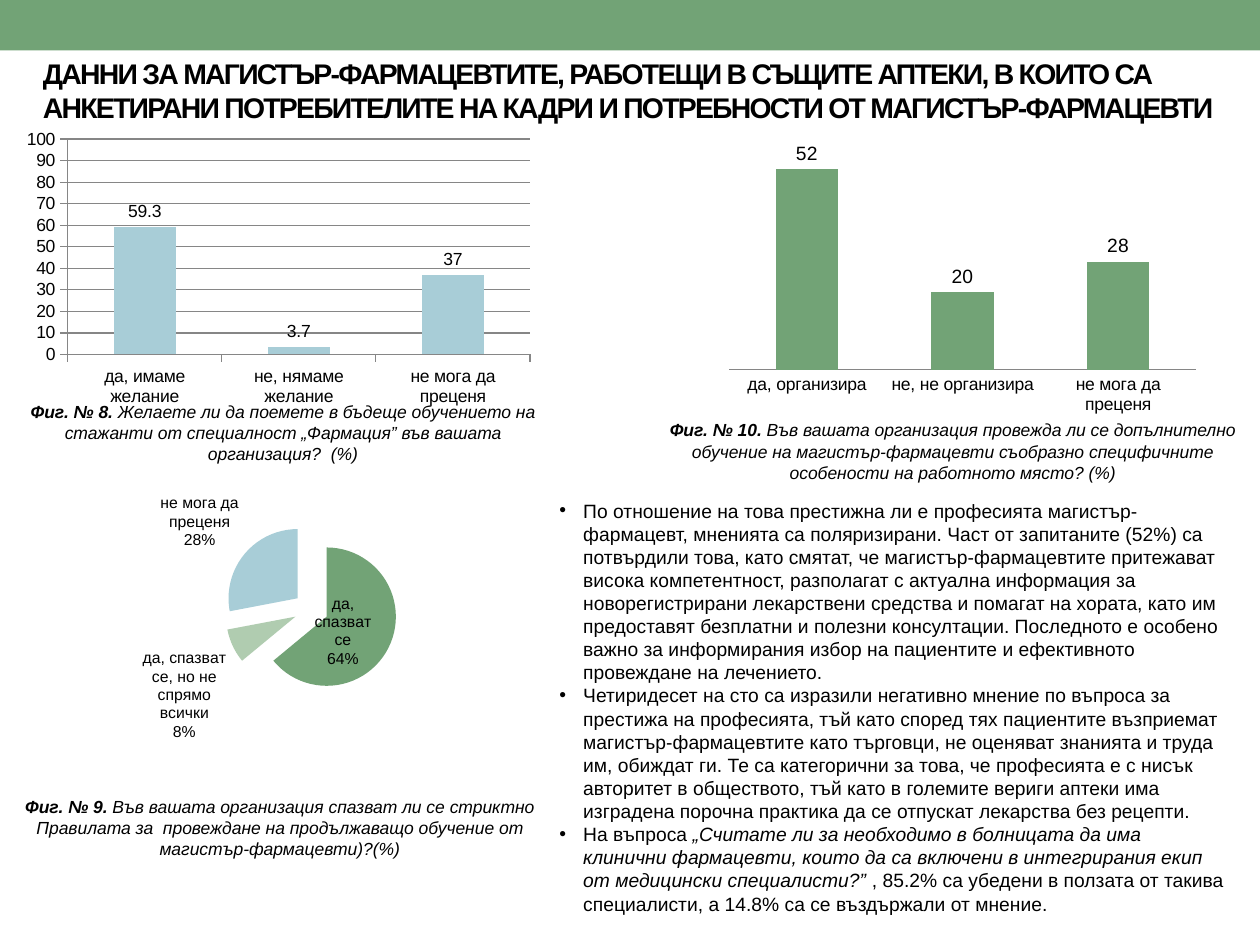
import pptx
import pptx.util
import pptx.chart.data
import pptx.dml.color
import pptx.enum.chart
import pptx.enum.shapes
import pptx.enum.text
import pptx.oxml
import pptx.oxml.ns
from lxml import etree

Inches, Pt = pptx.util.Inches, pptx.util.Pt
RGB = pptx.dml.color.RGBColor.from_string
CHART, TICK, LABEL = (pptx.enum.chart.XL_CHART_TYPE, pptx.enum.chart.XL_TICK_MARK,
                      pptx.enum.chart.XL_LABEL_POSITION)
ALIGN, FIT = pptx.enum.text.PP_ALIGN, pptx.enum.text.MSO_AUTO_SIZE
qn = pptx.oxml.ns.qn

FONT = "Arial"
COLORS = {"green": "72A376", "pale": "B0CCB0", "blue": "A8CDD7", "text": "000000", "axis": "868686"}

TITLE = ("ДАННИ ЗА МАГИСТЪР-ФАРМАЦЕВТИТЕ, РАБОТЕЩИ В СЪЩИТЕ АПТЕКИ, В КОИТО СА "
         "АНКЕТИРАНИ ПОТРЕБИТЕЛИТЕ НА КАДРИ И ПОТРЕБНОСТИ ОТ МАГИСТЪР-ФАРМАЦЕВТИ")

COLUMNS = [
    {"at": (0.12, 0.99, 4.17, 2.28), "plot": (0.1, 0.05, 0.88, 0.75), "color": "blue",
     "cats": ["да, имаме желание", "не, нямаме желание", "не мога да преценя"],
     "vals": [59.3, 3.7, 37], "max": 100, "scale": True, "size": 10},
    {"at": (5.71, 1.05, 3.86, 2.3), "plot": (0.02, 0.02, 0.96, 0.8), "color": "green",
     "cats": ["да, организира", "не, не организира", "не мога да преценя"],
     "vals": [52, 20, 28], "max": 60, "scale": False, "size": 11},
]
PIE = {"at": (0.28, 3.74, 4.17, 2.41), "plot": (0.36, 0.17, 0.33, 0.57),
       "cats": ["да, спазват се", "да, спазват се, но не спрямо всички", "не мога да преценя"],
       "vals": [64, 8, 28], "colors": ["green", "pale", "blue"]}

CAPTIONS = [
    ((0.12, 3.13, 4.25, 0.61), "Фиг. № 8.",
     " Желаете ли да поемете в бъдеще обучението на стажанти от специалност "
     "„Фармация” във вашата организация?  (%)"),
    ((-0.01, 6.27, 4.46, 0.61), "Фиг. № 9.",
     " Във вашата организация спазват ли се стриктно Правилата за  провеждане на "
     "продължаващо обучение от магистър-фармацевти)?(%)"),
    ((5.14, 3.28, 4.84, 0.61), "Фиг. № 10.",
     " Във вашата организация провежда ли се допълнително обучение на магистър-фармацевти "
     "съобразно специфичните особености на работното място? (%)"),
]

FINDINGS = [
    [("По отношение на това престижна ли е професията магистър-фармацевт, мненията са "
      "поляризирани. Част от запитаните (52%) са потвърдили това, като смятат, че "
      "магистър-фармацевтите притежават висока компетентност, разполагат с актуална "
      "информация за новорегистрирани лекарствени средства и помагат на хората, като им "
      "предоставят безплатни и полезни консултации. Последното е особено важно за "
      "информирания избор на пациентите и ефективното провеждане на лечението.", False)],
    [("Четиридесет на сто са изразили негативно мнение по въпроса за престижа на професията, "
      "тъй като според тях пациентите възприемат магистър-фармацевтите като търговци, не "
      "оценяват знанията и труда им, обиждат ги. Те са категорични за това, че професията е "
      "с нисък авторитет в обществото, тъй като в големите вериги аптеки има изградена "
      "порочна практика да се отпускат лекарства без рецепти.", False)],
    [("На въпроса ", False),
     ("„Считате ли за необходимо в болницата да има клинични фармацевти, които да са включени "
      "в интегрирания екип от медицински специалисти?”", True),
     (" , 85.2% са убедени в ползата от такива специалисти, а 14.8% са се въздържали от "
      "мнение.", False)],
]


def set_font(font, size, **formats):
    for name, value in {"name": FONT, "size": Pt(size), **formats}.items():
        setattr(font, name, value)
    font.color.rgb = RGB(COLORS["text"])


def paint(fill, color):
    fill.solid()
    fill.fore_color.rgb = RGB(COLORS[color])


def add_run(p, text, size, **formats):
    r = p.add_run()
    r.text = text
    set_font(r.font, size, **formats)
    return r


def add_text(s, at):
    tf = s.shapes.add_textbox(*map(Inches, at)).text_frame
    tf.word_wrap = True
    tf.auto_size = FIT.SHAPE_TO_FIT_TEXT
    return tf


def add_chart(s, kind, spec):
    data = pptx.chart.data.CategoryChartData()
    data.categories = spec["cats"]
    data.add_series("Series 1", spec["vals"])
    chart = s.shapes.add_chart(kind, *map(Inches, spec["at"]), data).chart
    chart.has_legend = chart.has_title = False
    set_font(chart.font, 10)
    area = chart.plots[0]._element.getparent()
    for old in area.findall(qn("c:layout")):
        area.remove(old)
    layout = etree.Element(qn("c:layout"))
    manual = etree.SubElement(layout, qn("c:manualLayout"))
    values = [("layoutTarget", "inner"), ("xMode", "edge"), ("yMode", "edge"),
              *zip("xywh", spec["plot"])]
    for tag, value in values:
        etree.SubElement(manual, qn("c:" + tag)).set("val", str(value))
    area.insert(0, layout)
    return chart


def add_columns(s, spec):
    chart = add_chart(s, CHART.COLUMN_CLUSTERED, spec)
    plot, cat, val = chart.plots[0], chart.category_axis, chart.value_axis
    plot.gap_width = 150
    plot.vary_by_categories = False
    paint(plot.series[0].format.fill, spec["color"])
    plot.has_data_labels = True
    labels = plot.data_labels
    labels.show_value = True
    labels.position = LABEL.OUTSIDE_END
    set_font(labels.font, spec["size"])
    val.minimum_scale, val.maximum_scale = 0, spec["max"]
    val.major_unit = 10
    val.visible = val.has_major_gridlines = spec["scale"]
    cat.major_tick_mark = val.major_tick_mark = TICK.OUTSIDE if spec["scale"] else TICK.NONE
    lines = [cat.format.line, val.format.line]
    if spec["scale"]:
        lines.append(val.major_gridlines.format.line)
    for line in lines:
        line.color.rgb = RGB(COLORS["axis"])
        line.width = Pt(0.75)


def add_pie(s, spec):
    plot = add_chart(s, CHART.PIE, spec).plots[0]
    plot.vary_by_categories = True
    series = plot.series[0]
    for i, color in enumerate(spec["colors"]):
        paint(series.points[i].format.fill, color)
    explosion = etree.Element(qn("c:explosion"))
    explosion.set("val", "25")
    series._element.find(qn("c:dPt")).addprevious(explosion)
    for point in series._element.findall(qn("c:dPt")):
        copy_of_gap = etree.Element(qn("c:explosion"))
        copy_of_gap.set("val", "25")
        point.find(qn("c:spPr")).addprevious(copy_of_gap)
    labels = series.data_labels
    for name in ("show_category_name", "show_percentage"):
        setattr(labels, name, True)
    labels.show_value = False
    labels.position = LABEL.BEST_FIT
    set_font(labels.font, 9)
    separator = etree.Element(qn("c:separator"))
    separator.text = "\n"
    labels._element.find(qn("c:showBubbleSize")).addnext(separator)


def add_findings(s):
    tf = add_text(s, (4.34, 3.91, 5.51, 3.43))
    for i, parts in enumerate(FINDINGS):
        p = tf.paragraphs[0] if i == 0 else tf.add_paragraph()
        pPr = p._p.get_or_add_pPr()
        pPr.set("marL", str(Inches(0.19)))
        pPr.set("indent", str(Inches(-0.19)))
        etree.SubElement(pPr, qn("a:buFont")).set("typeface", FONT)
        etree.SubElement(pPr, qn("a:buChar")).set("char", "•")
        for text, italic in parts:
            add_run(p, text, 11, italic=italic)


def main():
    prs = pptx.Presentation()
    prs.slide_width, prs.slide_height = Inches(10), Inches(7.5)
    s = prs.slides.add_slide(prs.slide_layouts[5])

    band = s.shapes.add_shape(pptx.enum.shapes.MSO_SHAPE.RECTANGLE, 0, 0, Inches(10), Inches(0.4))
    band.shadow.inherit = False
    paint(band.fill, "green")
    band.line.fill.background()

    title = s.shapes.title
    title.left, title.top, title.width, title.height = map(Inches, (0.24, 0.36, 9.53, 0.71))
    tf = title.text_frame
    tf.auto_size = FIT.NONE
    tf.vertical_anchor = pptx.enum.text.MSO_ANCHOR.MIDDLE
    p = tf.paragraphs[0]
    p.alignment = ALIGN.LEFT
    r = add_run(p, TITLE, 16.2, bold=True)
    r._r.get_or_add_rPr().set("spc", "-100")

    for spec in COLUMNS:
        add_columns(s, spec)
    add_pie(s, PIE)
    for at, number, question in CAPTIONS:
        p = add_text(s, at).paragraphs[0]
        p.alignment = ALIGN.CENTER
        add_run(p, number, 10, bold=True, italic=True)
        add_run(p, question, 10, italic=True)
    add_findings(s)
    prs.save("out.pptx")


if __name__ == "__main__":
    main()
